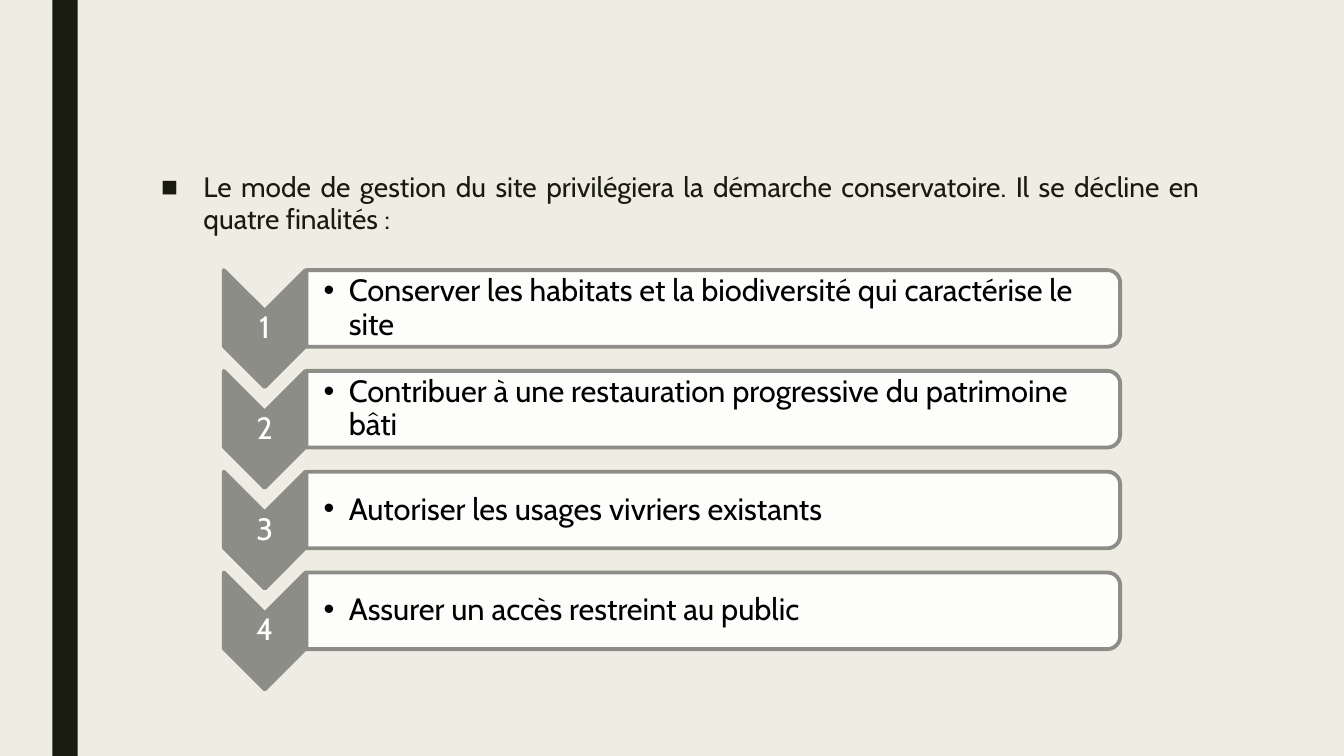
from lxml.etree import SubElement
from pptx import Presentation
from pptx.dml.color import RGBColor
from pptx.enum.shapes import MSO_SHAPE as Shape
from pptx.enum.text import MSO_ANCHOR as Anchor, PP_ALIGN as Align
from pptx.oxml.ns import qn
from pptx.util import Inches, Pt

COLORS = {
    "background": "EFEDE3",
    "ink": "191B0E",
    "step": "8C8D86",
    "white": "FFFFFF",
    "black": "000000",
}
FONT = "Cabin"
INTRO = ("Le mode de gestion du site privilégiera la démarche conservatoire. "
         "Il se décline en quatre finalités :")
GOALS = [
    "Conserver les habitats et la biodiversité qui caractérise le site",
    "Contribuer à une restauration progressive du patrimoine bâti",
    "Autoriser les usages vivriers existants",
    "Assurer un accès restreint au public",
]


def color(name):
    return RGBColor.from_string(COLORS[name])


def add_filled(slide, kind, box, fill, outline=None, rotation=0):
    left, top, width, height = box
    if rotation:
        left, top = left + (width - height) / 2, top + (height - width) / 2
        width, height = height, width
    shape = slide.shapes.add_shape(kind, *map(Inches, (left, top, width, height)))
    shape.rotation = rotation
    shape.shadow.inherit = False
    shape.fill.solid()
    shape.fill.fore_color.rgb = color(fill)
    if outline:
        shape.line.color.rgb = color(outline)
        shape.line.width = Pt(2.75)
    else:
        shape.line.fill.background()
    return shape


def add_text(slide, box, text, size, ink, insets, align, anchor,
             spacing=0.9, bullet=None, indent=0):
    frame = slide.shapes.add_textbox(*map(Inches, box)).text_frame
    frame.word_wrap = True
    frame.vertical_anchor = anchor
    (frame.margin_left, frame.margin_top,
     frame.margin_right, frame.margin_bottom) = map(Inches, insets)
    paragraph = frame.paragraphs[0]
    paragraph.text = text
    paragraph.alignment = align
    paragraph.line_spacing = spacing
    if bullet:
        properties = paragraph._p.get_or_add_pPr()
        properties.set("marL", str(Inches(indent)))
        properties.set("indent", str(-Inches(indent)))
        SubElement(properties, qn("a:buFont")).set("typeface", "Arial")
        SubElement(properties, qn("a:buChar")).set("char", bullet)
    paragraph.font.name = FONT
    paragraph.font.size = Pt(size)
    paragraph.font.color.rgb = color(ink)
    return paragraph


def add_intro(slide, box):
    intro = add_text(slide, box, INTRO, 20, "ink", (0.1, 0.05, 0.1, 0.05),
                     Align.JUSTIFY, Anchor.TOP, 0.94, "■", 0.42)
    intro.space_before = Pt(10)
    intro.space_after = Pt(2)


def add_goal(slide, box, number, goal):
    left, top, width, height = box
    step_width, bar_height = 0.81, 0.76
    bar_left, bar_width = left + step_width + 0.01, width - step_width - 0.01

    add_filled(slide, Shape.CHEVRON, (left, top, step_width, height),
               "step", "step", 90)
    add_text(slide, (left, top + step_width / 2, step_width, height - step_width),
             str(number), 22, "white", (0.02,) * 4, Align.CENTER, Anchor.MIDDLE)

    bar = add_filled(slide, Shape.ROUND_2_SAME_RECTANGLE,
                     (bar_left, top, bar_width, bar_height), "white", "step", 90)
    tint = bar._element.spPr.find(qn("a:solidFill")).find(qn("a:srgbClr"))
    SubElement(tint, qn("a:alpha")).set("val", "90000")
    add_text(slide, (bar_left, top + 0.04, bar_width - 0.03, bar_height - 0.08),
             goal, 22, "black", (0.17, 0.02, 0.02, 0.02),
             Align.LEFT, Anchor.MIDDLE, bullet="•", indent=0.25)


def add_goals(slide, box):
    left, top, width, height = box
    step_height, pitch = 1.16, 1
    for index, goal in enumerate(GOALS):
        add_goal(slide, (left, top + index * pitch, width, step_height),
                 index + 1, goal)


def main():
    deck = Presentation()
    deck.slide_width, deck.slide_height = Inches(13.33), Inches(7.5)
    slide = deck.slides.add_slide(deck.slide_layouts[6])
    slide.background.fill.solid()
    slide.background.fill.fore_color.rgb = color("background")
    add_filled(slide, Shape.RECTANGLE, (0.52, 0, 0.25, 7.5), "ink")
    add_intro(slide, (1.5, 1.66, 10.5, 0.81))
    add_goals(slide, (2.22, 2.68, 8.89, 4.16))
    deck.save("out.pptx")


if __name__ == "__main__":
    main()
